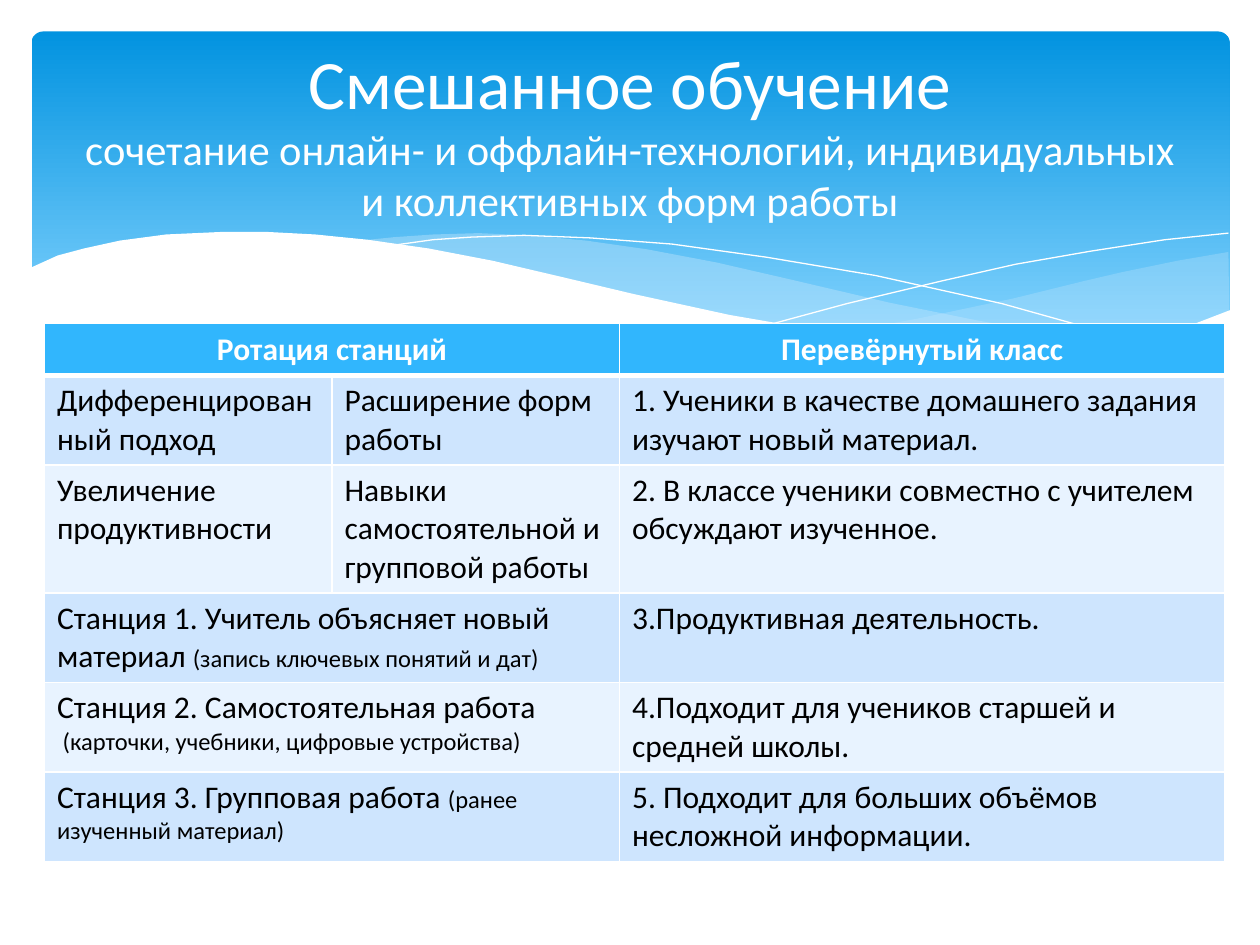
import pptx
import pptx.dml.color
import pptx.enum.shapes
import pptx.enum.text
import pptx.oxml
import pptx.oxml.ns
import pptx.util
from pptx.util import Pt

COLORS = {
    "sky_top": "0293E0", "sky_bottom": "83D3FE", "wave": "C6E7FC", "white": "FFFFFF",
    "black": "000000", "header": "31B6FD", "band_dark": "CEE5FE", "band_light": "E8F3FF",
}
FONT = "Calibri"

# Wave outlines in points, measured from the banner's top left corner
FAR_WAVE = [
    (684, 126), (655, 131), (623.5, 137.5), (602, 142.5), (561.5, 152.5), (507, 164),
    (458, 173), (479.5, 175.5), (509, 179.5), (544.5, 181.5), (575.5, 181.5),
    (603.5, 180), (633.5, 175.5), (660, 168.5), (684.5, 160),
]
MIDDLE_WAVE = [
    (625, 178.5), (584.5, 173), (540, 165), (490.5, 155), (435, 142), (391.5, 132),
    (352, 124.5), (317, 119.5), (284.5, 116.5), (255.5, 115.2), (229.5, 116),
    (207.5, 117.5), (188, 119.5), (214.5, 123), (242.5, 128), (273, 134), (305.5, 142),
    (363.5, 155), (414.5, 165.5), (461, 173.5), (502, 179.5), (538.5, 181.5),
    (571, 182), (599, 181.5),
]
FALLING_LINE = [
    (204.5, 122.5), (229.5, 119), (251.5, 117.5), (281.5, 116.5), (319.5, 118),
    (366, 121.5), (420, 129), (482.5, 139.5), (554.5, 155.5), (635, 178),
]
RISING_LINE = [
    (423.5, 167), (466, 155.5), (520.5, 142.5), (562.5, 133), (605.5, 125.5),
    (647.5, 119), (684, 115.2),
]
FRONT_WAVE = [
    (685.5, 159), (666, 166.5), (637, 174), (603.5, 179.5), (564.5, 181.5),
    (517.5, 179.5), (463, 173), (399, 162), (344, 150), (304, 140.5), (263.5, 131),
    (227, 124), (192, 119), (162, 116), (134, 114.5), (109.5, 114.5), (77, 116),
    (50.5, 119.5), (30, 124), (15, 128), (-1.5, 135.5), (-1.5, 219), (685.5, 219),
]

# Each row lists its cells; a cell lists paragraphs of (text, size) spans
ROWS = [
    [[[("Дифференцированный подход", 18)]], [[("Расширение форм работы", 18)]],
     [[("1. Ученики в качестве домашнего задания изучают новый материал.", 18)]]],
    [[[("Увеличение продуктивности", 18)]],
     [[("Навыки самостоятельной и групповой работы", 18)]],
     [[("2. В классе ученики совместно с учителем обсуждают изученное.", 18)]]],
    [[[("Станция 1. Учитель объясняет новый материал ", 18),
       ("(запись ключевых понятий и дат)", 14)]], None,
     [[("3.Продуктивная деятельность.", 18)]]],
    [[[("Станция 2. Самостоятельная работа", 18)],
      [(" (карточки, учебники, цифровые устройства)", 14)]], None,
     [[("4.Подходит для учеников старшей и средней школы.", 18)]]],
    [[[("Станция 3. Групповая работа ", 18), ("(ранее изученный материал)", 14)]], None,
     [[("5. Подходит для больших объёмов несложной информации.", 18)]]],
]
HEADER = [[[("Ротация станций", 18)]], None, [[("Перевёрнутый класс", 18)]]]


def rgb(name):
    return pptx.dml.color.RGBColor.from_string(COLORS[name])


def write(para, text, size=18, color="black", bold=False):
    span = para.add_run()
    span.text = text
    span.font.name = FONT
    span.font.size = Pt(size)
    span.font.bold = bold
    span.font.color.rgb = rgb(color)


def add_wave(slide, box, points, fill=None, opacity=100):
    """Draw a filled outline, or an open white hairline when there is no fill."""
    left, top = box[:2]
    corners = [(Pt(left + x), Pt(top + y)) for x, y in points]
    builder = slide.shapes.build_freeform(*corners[0])
    builder.add_line_segments(corners[1:], close=fill is not None)
    wave = builder.convert_to_shape()
    wave.shadow.inherit = False
    if fill is None:
        wave.fill.background()
        wave.line.color.rgb = rgb("white")
        wave.line.width = Pt(0)
        return
    wave.line.fill.background()
    wave.fill.solid()
    wave.fill.fore_color.rgb = rgb(fill)
    if opacity < 100:
        color = wave.element.spPr.find(".//" + pptx.oxml.ns.qn("a:srgbClr"))
        color.append(pptx.oxml.parse_xml(
            f'<a:alpha {pptx.oxml.ns.nsdecls("a")} val="{opacity * 1000}"/>'))


def add_banner(slide, box):
    sky = slide.shapes.add_shape(
        pptx.enum.shapes.MSO_SHAPE.ROUNDED_RECTANGLE, *map(Pt, box))
    sky.adjustments[0] = 0.034
    sky.shadow.inherit = False
    sky.line.fill.background()
    sky.fill.gradient()
    sky.fill.gradient_angle = 270
    stops = [("sky_top", 0), ("sky_bottom", 0.9)]
    for stop, (color, position) in zip(sky.fill.gradient_stops, stops):
        stop.color.rgb = rgb(color)
        stop.position = position
    add_wave(slide, box, FAR_WAVE, "wave", 29)
    add_wave(slide, box, MIDDLE_WAVE, "wave", 40)
    add_wave(slide, box, FALLING_LINE)
    add_wave(slide, box, RISING_LINE)
    add_wave(slide, box, FRONT_WAVE, "white")


def place_title(slide, box):
    title = slide.shapes.title
    title.left, title.top, title.width, title.height = map(Pt, box)
    frame = title.text_frame
    frame.auto_size = pptx.enum.text.MSO_AUTO_SIZE.NONE
    frame.vertical_anchor = pptx.enum.text.MSO_ANCHOR.MIDDLE
    para = frame.paragraphs[0]
    para.alignment = pptx.enum.text.PP_ALIGN.CENTER
    write(para, "Смешанное обучение", size=39.6, color="white")
    para.add_line_break()
    write(para, "сочетание онлайн- и оффлайн-технологий, индивидуальных "
          "и коллективных форм работы", size=24.3, color="white")
    slide.shapes.element.append(title.element)  # bring to front


def format_cell(cell, fill, bottom):
    properties = cell._tc.get_or_add_tcPr()
    for side, width in (("L", 1), ("R", 1), ("T", 1), ("B", bottom)):
        properties.append(pptx.oxml.parse_xml(
            f'<a:ln{side} {pptx.oxml.ns.nsdecls("a")} w="{Pt(width)}"><a:solidFill>'
            f'<a:srgbClr val="{COLORS["white"]}"/></a:solidFill></a:ln{side}>'))
    cell.fill.solid()
    cell.fill.fore_color.rgb = rgb(fill)


def add_methods_table(slide, box):
    contents = [HEADER] + ROWS
    table = slide.shapes.add_table(len(contents), 3, *map(Pt, box)).table
    table.horz_banding = False
    for column, width in zip(table.columns, (164.3, 164.3, 346)):
        column.width = Pt(width)
    for row, height in zip(table.rows, (29.5, 51, 73, 51, 51, 51)):
        row.height = Pt(height)
    for r, row in enumerate(contents):
        is_header = r == 0
        fill = "header" if is_header else ("band_light", "band_dark")[r % 2]
        for c, paragraphs in enumerate(row):
            cell = table.cell(r, c)
            format_cell(cell, fill, bottom=3 if is_header else 1)
            if paragraphs is None:
                table.cell(r, c - 1).merge(cell)
                continue
            for p, spans in enumerate(paragraphs):
                frame = cell.text_frame
                para = frame.add_paragraph() if p else frame.paragraphs[0]
                if is_header:
                    para.alignment = pptx.enum.text.PP_ALIGN.CENTER
                for text, size in spans:
                    write(para, text, size=size, bold=is_header,
                          color="white" if is_header else "black")


def main():
    deck = pptx.Presentation()
    deck.slide_width, deck.slide_height = Pt(720), Pt(540)
    slide = deck.slides.add_slide(deck.slide_layouts[5])
    add_banner(slide, (18, 18, 684.7, 194.4))
    add_methods_table(slide, (25.4, 185, 674.6, 306.5))
    place_title(slide, (36, 26.5, 648, 98.5))
    deck.save("out.pptx")


if __name__ == "__main__":
    main()
